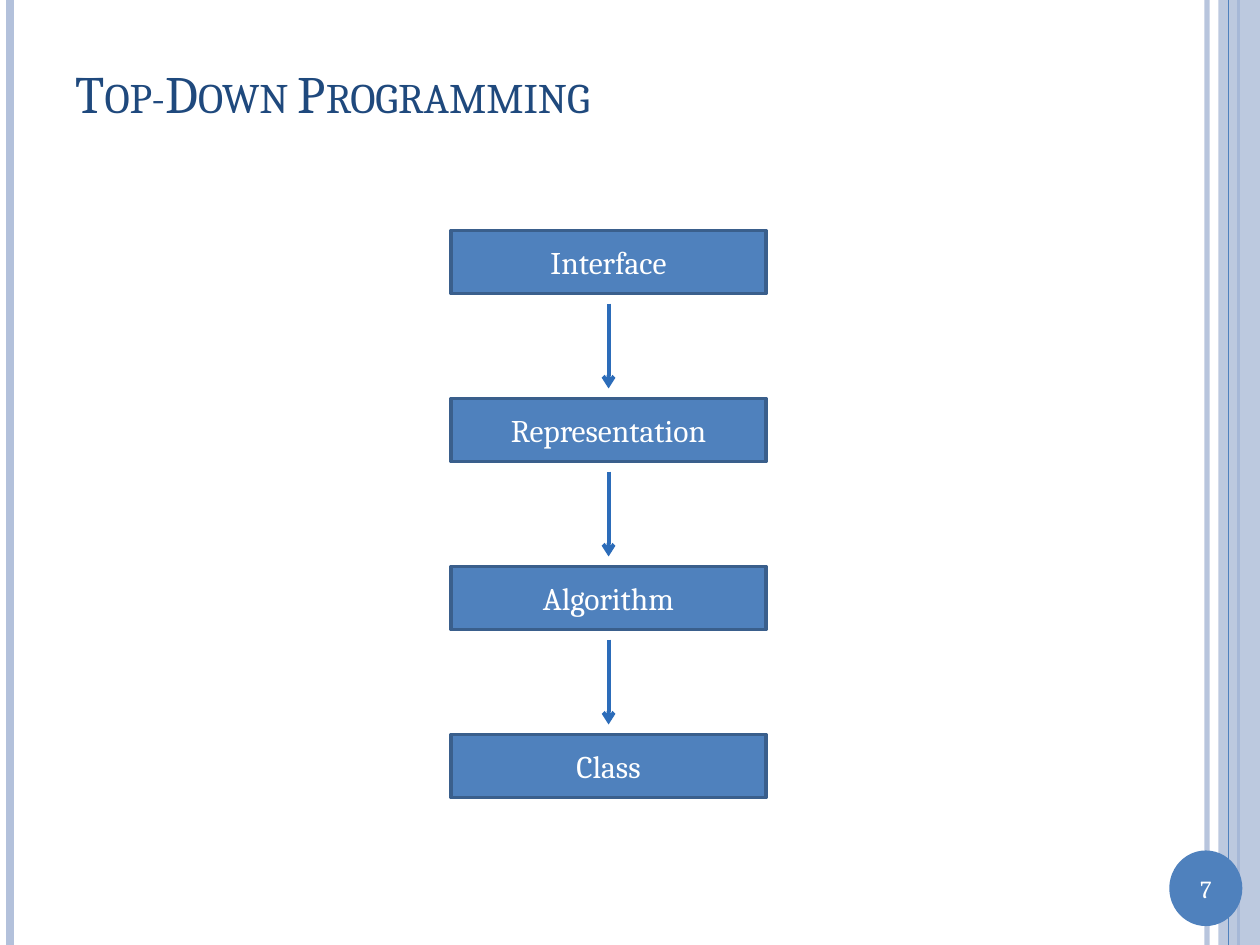
"""Build the Top-Down Programming slide."""
from lxml import etree
from pptx import Presentation
from pptx.dml.color import RGBColor
from pptx.enum.shapes import MSO_CONNECTOR, MSO_SHAPE
from pptx.enum.text import MSO_ANCHOR, PP_ALIGN
from pptx.oxml.ns import qn
from pptx.util import Inches, Pt

STRAIGHT = MSO_CONNECTOR.STRAIGHT
RECTANGLE = MSO_SHAPE.RECTANGLE
OVAL = MSO_SHAPE.OVAL
MIDDLE = MSO_ANCHOR.MIDDLE
LEFT = PP_ALIGN.LEFT
CENTER = PP_ALIGN.CENTER

WHITE = RGBColor(0xFF, 0xFF, 0xFF)
NAVY = RGBColor(0x1F, 0x49, 0x7D)
BLUE = RGBColor(0x4F, 0x81, 0xBD)
PALE_BLUE = RGBColor(0xB3, 0xC1, 0xDB)
BOX_EDGE = RGBColor(0x3A, 0x5F, 0x8C)
ARROW_BLUE = RGBColor(0x2C, 0x6C, 0xB9)

FONT = "Cambria"
PAGE_WIDTH, PAGE_HEIGHT = 10, 7.5
STEPS = ["Interface", "Representation", "Algorithm", "Class"]
BOX_LEFT, BOX_TOP, BOX_WIDTH, BOX_HEIGHT = 3.58, 1.83, 2.5, 0.5
STEP_PITCH = 4 / 3
ARROW_GAP = 0.08


def set_alpha(fill_parent, percent):
    """Make the solid colour below an element partly transparent."""
    color = fill_parent.find(qn("a:solidFill"))[0]
    etree.SubElement(color, qn("a:alpha")).set("val", str(percent * 1000))


def add_line(page, start, end, color, width, alpha=None, arrow=False):
    """Draw a straight line, optionally translucent or with an arrowhead."""
    line = page.shapes.add_connector(STRAIGHT, *map(Inches, start + end))
    line.line.color.rgb = color
    line.line.width = Pt(width)
    properties = line._element.spPr
    outline = properties.find(qn("a:ln"))
    if alpha:
        set_alpha(outline, alpha)
    if arrow:
        etree.SubElement(outline, qn("a:tailEnd")).set("type", "arrow")
    etree.SubElement(properties, qn("a:effectLst"))


def add_shape(page, kind, bounds, color, edge=None, alpha=None):
    """Draw a filled preset shape and return it."""
    shape = page.shapes.add_shape(kind, *map(Inches, bounds))
    shape.shadow.inherit = False
    shape.fill.solid()
    shape.fill.fore_color.rgb = color
    if alpha:
        set_alpha(shape._element.spPr, alpha)
    if edge:
        shape.line.color.rgb = edge
        shape.line.width = Pt(2)
    else:
        shape.line.fill.background()
    return shape


def write(shape, text, size, color, align=CENTER):
    """Put one vertically centred paragraph in a shape and return it."""
    frame = shape.text_frame
    frame.word_wrap = True
    frame.vertical_anchor = MIDDLE
    para = frame.paragraphs[0]
    para.text = text
    para.alignment = align
    para.font.name = FONT
    para.font.size = Pt(size)
    para.font.color.rgb = color
    return para


def add_text(page, bounds, text, size, color, align):
    """Add a text box and return its paragraph."""
    box = page.shapes.add_textbox(*map(Inches, bounds))
    return write(box, text, size, color, align)


def add_rule(page, x, color, width, alpha=None):
    """Draw a vertical rule over the full page height."""
    add_line(page, (x, 0), (x, PAGE_HEIGHT), color, width, alpha)


def add_frame(page):
    """Draw the side rules, the right band and the page number."""
    add_rule(page, 9.58, PALE_BLUE, 3, alpha=93)
    add_rule(page, 0.08, PALE_BLUE, 4.5)
    add_rule(page, 9.83, BLUE, 1.5)
    add_shape(page, RECTANGLE, (9.67, 0, 0.33, PAGE_HEIGHT), PALE_BLUE, alpha=87)
    add_rule(page, 9.75, BLUE, 0.75)
    add_shape(page, OVAL, (9.28, 6.75, 0.58, 0.6), BLUE)
    add_text(page, (9.28, 6.88, 0.58, 0.34), "7", 14, WHITE, CENTER)


def add_title(page, text):
    """Write the slide title in small capitals."""
    para = add_text(page, (0.5, 0.3, 8.67, 0.87), text, 30, NAVY, LEFT)
    for span in para.runs:
        span._r.get_or_add_rPr().set("cap", "small")


def add_steps(page):
    """Stack the step boxes, with an arrow in each gap between them."""
    middle = BOX_LEFT + BOX_WIDTH / 2
    for index, step in enumerate(STEPS):
        top = BOX_TOP + index * STEP_PITCH
        bounds = (BOX_LEFT, top, BOX_WIDTH, BOX_HEIGHT)
        write(add_shape(page, RECTANGLE, bounds, BLUE, BOX_EDGE), step, 18, WHITE)
        if index:
            start = top - STEP_PITCH + BOX_HEIGHT + ARROW_GAP
            add_line(page, (middle, start), (middle, top - ARROW_GAP),
                     ARROW_BLUE, 2.25, arrow=True)


def main():
    """Build and save the deck."""
    deck = Presentation()
    deck.slide_width = Inches(PAGE_WIDTH)
    deck.slide_height = Inches(PAGE_HEIGHT)
    page = deck.slides.add_slide(deck.slide_layouts[6])
    add_frame(page)
    add_title(page, "Top-Down Programming")
    add_steps(page)
    deck.save("out.pptx")


if __name__ == "__main__":
    main()
